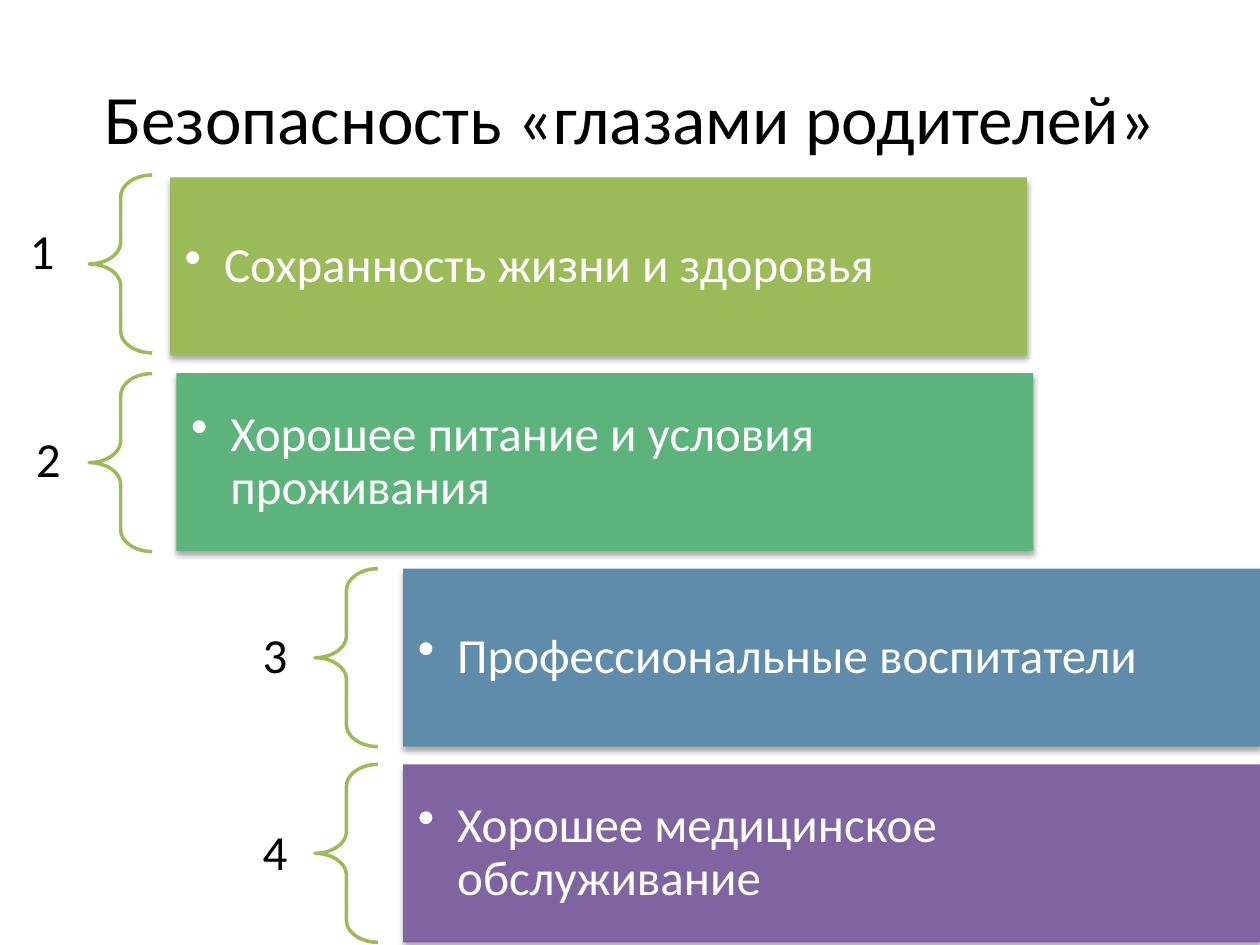
"""Build the slide listing what safety means in the eyes of parents."""
from typing import NamedTuple

from lxml import etree
from pptx import Presentation
from pptx.dml.color import RGBColor
from pptx.enum.shapes import MSO_SHAPE
from pptx.enum.text import MSO_ANCHOR, PP_ALIGN
from pptx.oxml.ns import qn
from pptx.util import Pt

RECTANGLE, BRACE = MSO_SHAPE.RECTANGLE, MSO_SHAPE.LEFT_BRACE
MIDDLE = MSO_ANCHOR.MIDDLE
LEFT, CENTER, RIGHT = PP_ALIGN.LEFT, PP_ALIGN.CENTER, PP_ALIGN.RIGHT

BLACK = RGBColor(0x00, 0x00, 0x00)
WHITE = RGBColor(0xFF, 0xFF, 0xFF)
OLIVE = RGBColor(0x9B, 0xBB, 0x59)
GREEN = RGBColor(0x5C, 0xB3, 0x7C)
BLUE = RGBColor(0x60, 0x8C, 0xAB)
PURPLE = RGBColor(0x80, 0x64, 0xA2)

FONT = "Calibri"
TITLE_SIZE, ITEM_SIZE = 39.6, 28
FIRST_TOP, ROW_PITCH = 101.4, 111.8
BAR_WIDTH, BAR_HEIGHT = 489.6, 101.7
BRACE_WIDTH, NUMBER_HEIGHT = 36, 56.2
BULLET_INDENT = 22.5


class Concern(NamedTuple):
    text: str
    color: RGBColor
    bar_left: float
    brace_left: float
    brace_top: float
    number_width: float
    number_top: float


CONCERNS = [
    Concern("Сохранность жизни и здоровья", OLIVE, 97.2, 51, 100, 46.8, 116.6),
    Concern("Хорошее питание и условия проживания", GREEN, 100.8, 51, 213.5, 50.4, 235.4),
    Concern("Профессиональные воспитатели", BLUE, 230.4, 180, 325, 180, 347.8),
    Concern("Хорошее медицинское обслуживание", PURPLE, 230.4, 180, 436.8, 180, 460.1),
]


def write(shape, text: str, size: float, color: RGBColor, align, inset_x: float, inset_y: float):
    """Fill a shape with one styled paragraph and return that paragraph."""
    frame = shape.text_frame
    frame.text = text
    frame.word_wrap = True
    frame.vertical_anchor = MIDDLE
    frame.margin_left = frame.margin_right = Pt(inset_x)
    frame.margin_top = frame.margin_bottom = Pt(inset_y)
    paragraph = frame.paragraphs[0]
    paragraph.alignment = align
    font = paragraph.runs[0].font
    font.name, font.size, font.color.rgb = FONT, Pt(size), color
    return paragraph


def add_bullet(paragraph) -> None:
    """Give a paragraph a round bullet with a hanging indent."""
    properties = paragraph._p.get_or_add_pPr()
    properties.set("marL", str(Pt(BULLET_INDENT)))
    properties.set("indent", str(-Pt(BULLET_INDENT)))
    etree.SubElement(properties, qn("a:buChar"), char="•")


def add_shadow(shape) -> None:
    """Cast a soft shadow straight below a shape."""
    effects = shape._element.spPr.find(qn("a:effectLst"))
    shadow = etree.SubElement(
        effects, qn("a:outerShdw"), blurRad=str(Pt(3.1)), dist=str(Pt(1.8)),
        dir="5400000", rotWithShape="0")
    shade = etree.SubElement(shadow, qn("a:srgbClr"), val=str(BLACK))
    etree.SubElement(shade, qn("a:alpha"), val="35000")


def add_concern(slide, index: int, concern: Concern) -> None:
    """Draw the number, brace and coloured bar of one concern."""
    number = slide.shapes.add_textbox(
        0, Pt(concern.number_top), Pt(concern.number_width), Pt(NUMBER_HEIGHT))
    write(number, str(index + 1), ITEM_SIZE, BLACK, RIGHT, 15.7, 5.6).line_spacing = 0.9

    brace = slide.shapes.add_shape(
        BRACE, Pt(concern.brace_left), Pt(concern.brace_top), Pt(BRACE_WIDTH), Pt(BAR_HEIGHT))
    brace.adjustments[0], brace.adjustments[1] = 0.35, 0.5
    brace.fill.background()
    brace.line.color.rgb = OLIVE
    brace.line.width = Pt(2)
    brace.shadow.inherit = False

    bar = slide.shapes.add_shape(
        RECTANGLE, Pt(concern.bar_left), Pt(FIRST_TOP + index * ROW_PITCH),
        Pt(BAR_WIDTH), Pt(BAR_HEIGHT))
    bar.fill.solid()
    bar.fill.fore_color.rgb = concern.color
    bar.line.fill.background()
    bar.shadow.inherit = False
    add_shadow(bar)
    label = write(bar, concern.text, ITEM_SIZE, WHITE, LEFT, 8.4, 8.4)
    label.line_spacing = 0.9
    add_bullet(label)


def main() -> None:
    """Build and save the presentation."""
    deck = Presentation()
    deck.slide_width, deck.slide_height = Pt(720), Pt(540)
    slide = deck.slides.add_slide(deck.slide_layouts[5])
    title = slide.shapes.title
    title.left, title.top, title.width, title.height = Pt(36), Pt(21.6), Pt(648), Pt(90)
    write(title, "Безопасность «глазами родителей»", TITLE_SIZE, BLACK, CENTER, 7.2, 3.6)
    for index, concern in enumerate(CONCERNS):
        add_concern(slide, index, concern)
    deck.save("out.pptx")


if __name__ == "__main__":
    main()
